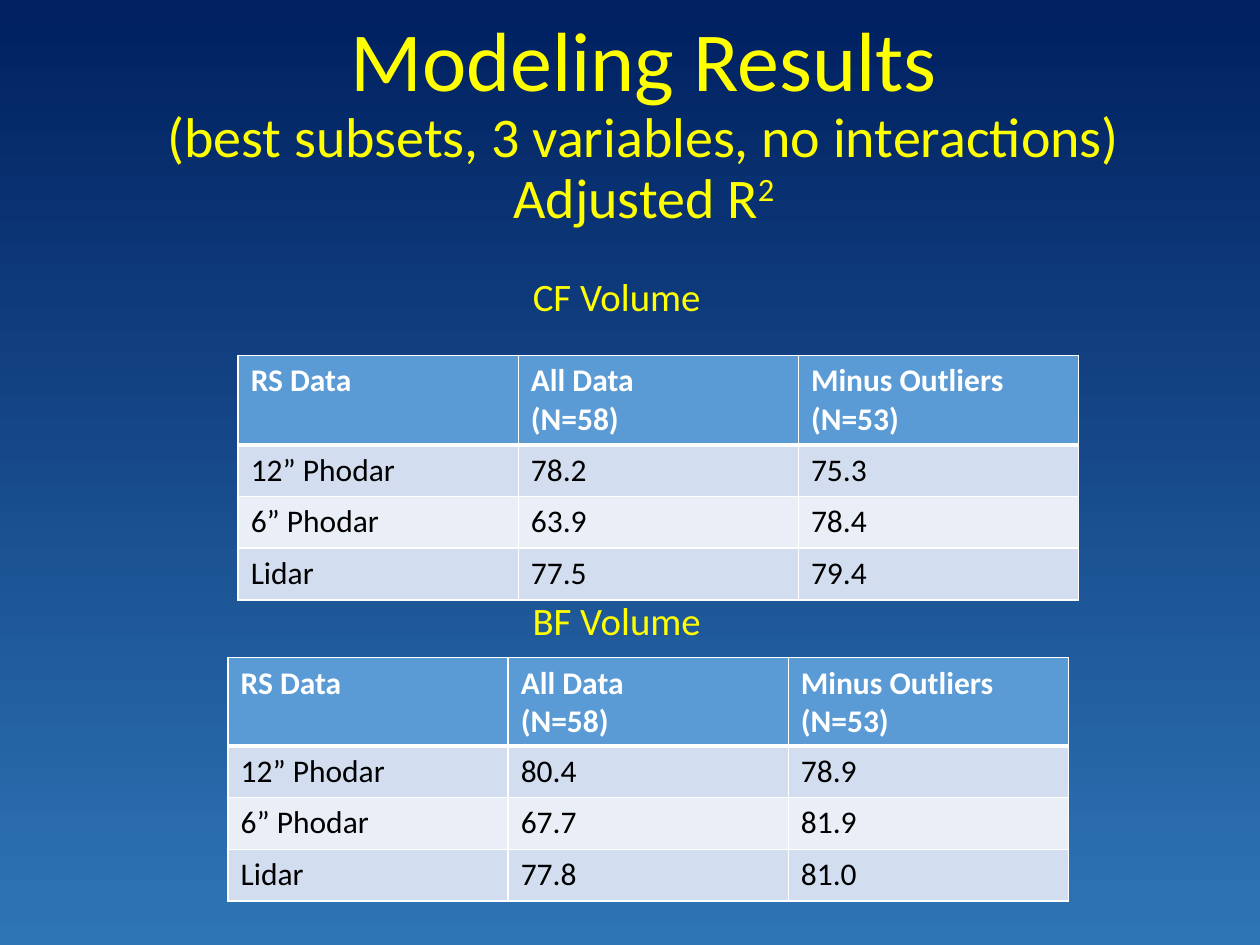
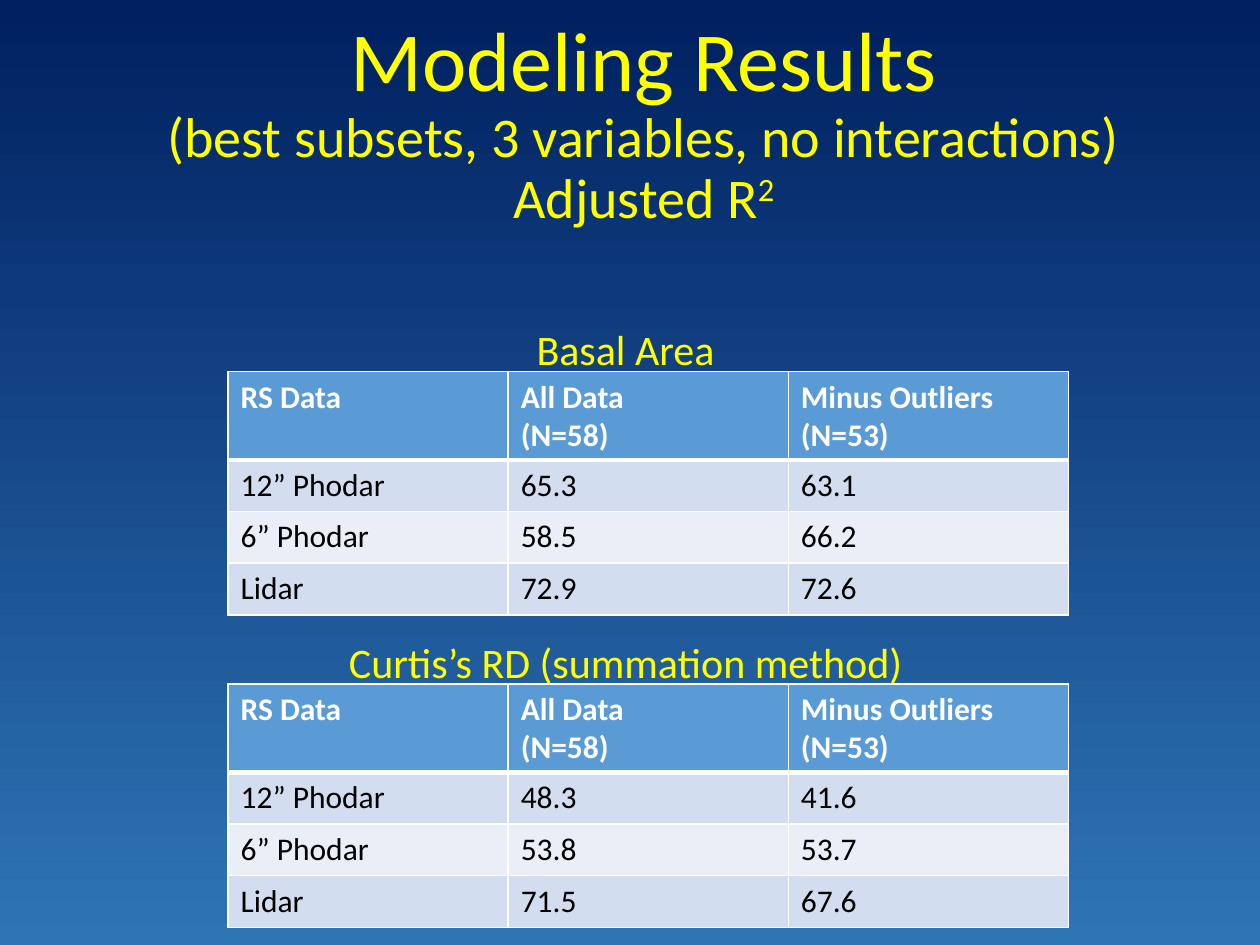
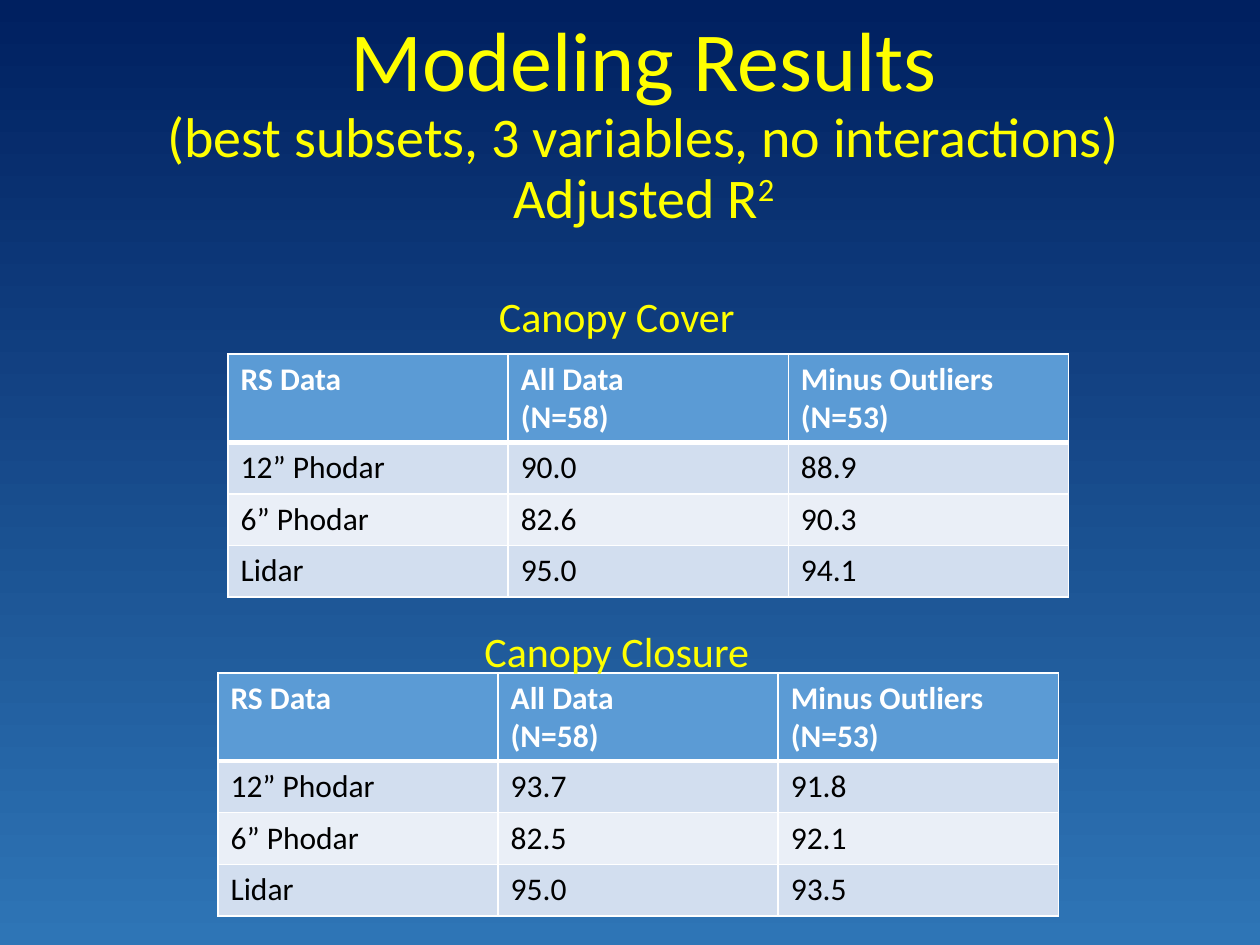
import pptx
import pptx.util
import pptx.dml.color
import pptx.enum.text
import pptx.oxml
import pptx.oxml.ns

Inches = pptx.util.Inches
Pt = pptx.util.Pt
CENTER = pptx.enum.text.PP_ALIGN.CENTER

FONT = "Calibri"
YELLOW, WHITE, BLACK = "FFFF00", "FFFFFF", "000000"
GRADIENT = ["002060", "2E75B6"]
HEADER_FILL = "5B9BD5"
BAND_FILLS = ["D2DEEF", "EAEFF7"]
TITLE = "Modeling Results\v(best subsets, 3 variables, no interactions)\vAdjusted R"
HEADER = ["RS Data", "All Data\n(N=58)", "Minus Outliers\n(N=53)"]
SOURCES = ["12” Phodar", "6” Phodar", "Lidar"]
ROW_HEIGHTS = [0.7, 0.41, 0.41, 0.41]

SLIDES = [
    [
        dict(caption="CF Volume", at=(0.21, 2.19), height=0.4, size=22.2, spacing=0.8, table=(1.89, 2.82),
             values=[("78.2", "75.3"), ("63.9", "78.4"), ("77.5", "79.4")]),
        dict(caption="BF Volume", at=(0.21, 4.76), height=0.4, size=22.2, spacing=0.8, table=(1.81, 5.22),
             values=[("80.4", "78.9"), ("67.7", "81.9"), ("77.8", "81.0")]),
    ],
    [
        dict(caption="Basal Area", at=(0.28, 2.56), height=0.51, size=24, spacing=0.9, table=(1.81, 2.95),
             values=[("65.3", "63.1"), ("58.5", "66.2"), ("72.9", "72.6")]),
        dict(caption="Curtis’s RD (summation method)", at=(0.28, 5.05), height=0.51, size=24, spacing=0.9,
             table=(1.81, 5.43), values=[("48.3", "41.6"), ("53.8", "53.7"), ("71.5", "67.6")]),
    ],
    [
        dict(caption="Canopy Cover", at=(0.21, 2.3), height=0.51, size=24, spacing=0.9, table=(1.81, 2.81),
             values=[("90.0", "88.9"), ("82.6", "90.3"), ("95.0", "94.1")]),
        dict(caption="Canopy Closure", at=(0.21, 4.96), height=0.51, size=24, spacing=0.9, table=(1.73, 5.34),
             values=[("93.7", "91.8"), ("82.5", "92.1"), ("95.0", "93.5")]),
    ],
]


def rgb(value):
    return pptx.dml.color.RGBColor.from_string(value)


def style(r, size, color, bold=False):
    r.font.name = FONT
    r.font.size = Pt(size)
    r.font.bold = bold
    r.font.color.rgb = rgb(color)


prs = pptx.Presentation()
prs.slide_width = Inches(10)
prs.slide_height = Inches(7.5)

for sections in SLIDES:
    s = prs.slides.add_slide(prs.slide_layouts[6])
    fill = s.background.fill
    fill.gradient()
    fill.gradient_angle = 270
    for stop, color in zip(fill.gradient_stops, GRADIENT):
        stop.color.rgb = rgb(color)

    for section in sections:
        left, top = section["table"]
        table = s.shapes.add_table(4, 3, Inches(left), Inches(top), Inches(6.67), Inches(sum(ROW_HEIGHTS))).table
        for column in table.columns:
            column.width = Inches(6.67 / 3)
        rows = [HEADER] + [[source, *pair] for source, pair in zip(SOURCES, section["values"])]
        for i, texts in enumerate(rows):
            table.rows[i].height = Inches(ROW_HEIGHTS[i])
            for j, text in enumerate(texts):
                cell = table.cell(i, j)
                cell.text_frame.text = text
                for p in cell.text_frame.paragraphs:
                    for r in p.runs:
                        style(r, 18, BLACK if i else WHITE, i == 0)
                tcPr = cell._tc.get_or_add_tcPr()
                for side in "LRTB":
                    thick = (i, side) in [(0, "B"), (1, "T")]
                    tcPr.append(pptx.oxml.parse_xml(
                        f'<a:ln{side} {pptx.oxml.ns.nsdecls("a")} w="{Pt(3 if thick else 1)}">'
                        f'<a:solidFill><a:srgbClr val="{WHITE}"/></a:solidFill></a:ln{side}>'))
                cell.fill.solid()
                cell.fill.fore_color.rgb = rgb(BAND_FILLS[(i - 1) % 2] if i else HEADER_FILL)

        left, top = section["at"]
        sp = s.shapes.add_textbox(Inches(left), Inches(top), Inches(9.37), Inches(section["height"]))
        tf = sp.text_frame
        tf.word_wrap = True
        p = tf.paragraphs[0]
        p.text = section["caption"]
        p.alignment = CENTER
        p.line_spacing = section["spacing"]
        p.space_before = Pt(10)
        style(p.runs[0], section["size"], YELLOW)

    sp = s.shapes.add_textbox(Inches(0.21), Inches(1.32), Inches(9.8), Inches(0.56))
    tf = sp.text_frame
    tf.word_wrap = True
    tf.vertical_anchor = pptx.enum.text.MSO_ANCHOR.BOTTOM
    p = tf.paragraphs[0]
    p.text = TITLE
    p.alignment = CENTER
    p.line_spacing = 0.9
    exponent = p.add_run()
    exponent.text = "2"
    for r, size in zip(p.runs, [48, 32, 32, 32]):
        style(r, size, YELLOW)
    exponent.font._element.set("baseline", "30000")

prs.save("out.pptx")
